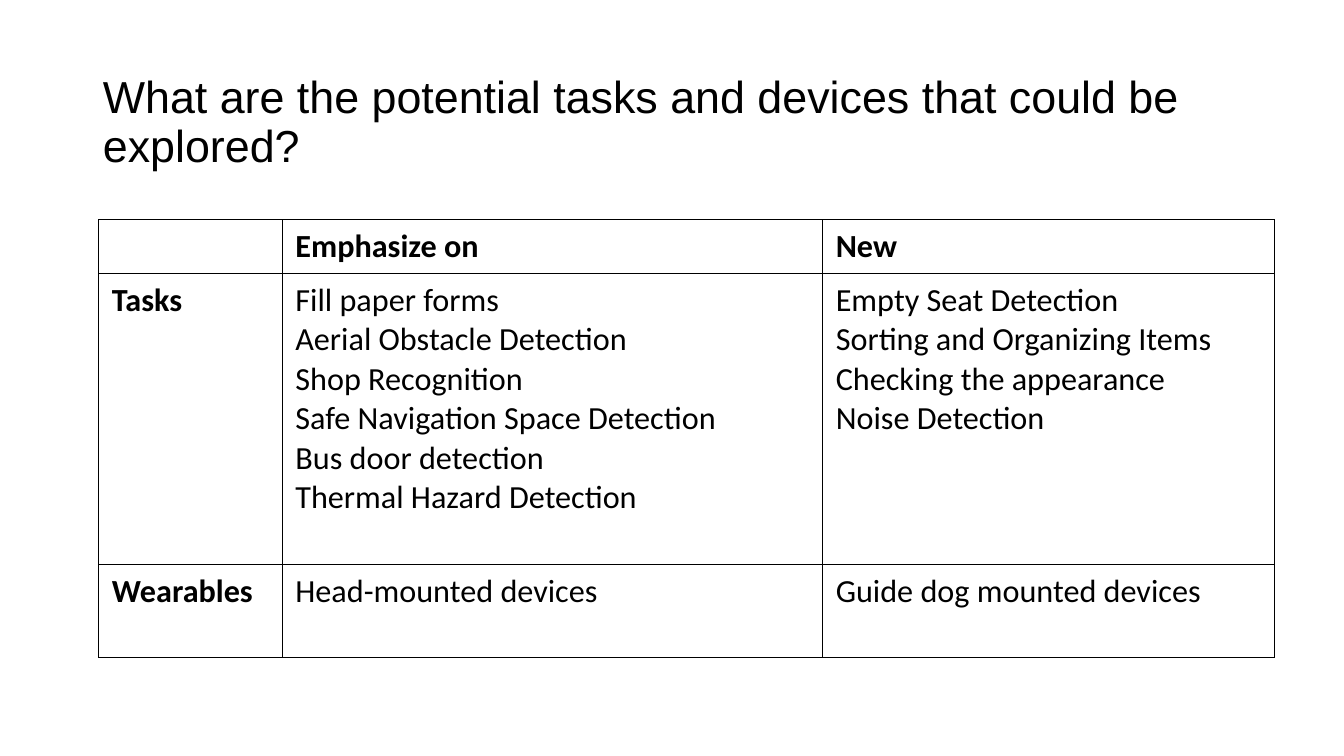
from dataclasses import dataclass
from pptx import Presentation
from pptx.dml.color import RGBColor
from pptx.enum.text import MSO_ANCHOR, MSO_AUTO_SIZE, PP_ALIGN
from pptx.oxml import parse_xml
from pptx.oxml.ns import nsdecls
from pptx.util import Emu, Pt


@dataclass(frozen=True)
class Theme:
    ink: str = "000000"
    paper: str = "FFFFFF"
    title_font: str = "Arial"
    table_font: str = "Calibri"
    title_size: int = 32
    table_size: int = 23
    border_width: int = 1


THEME = Theme()
EMU_PER_PX = 9144
TITLE_BOX = (92, 64, 1150, 117)
TABLE_ORIGIN = (98, 218)
COLUMNS = (182, 536, 448)
ROWS = (53, 289, 92)
CELL_INSETS = (13, 7)

TITLE = "What are the potential tasks and devices that could be explored?"
CELLS = (
    ((), ("Emphasize on",), ("New",)),
    (
        ("Tasks",),
        (
            "Fill paper forms",
            "Aerial Obstacle Detection",
            "Shop Recognition",
            "Safe Navigation Space Detection",
            "Bus door detection",
            "Thermal Hazard Detection",
        ),
        (
            "Empty Seat Detection",
            "Sorting and Organizing Items",
            "Checking the appearance",
            "Noise Detection",
        ),
    ),
    (("Wearables",), ("Head-mounted devices",), ("Guide dog mounted devices",)),
)


def px(n):
    return Emu(n * EMU_PER_PX)


def write(tf, lines, *, font, size, bold=False, spacing=1.0):
    for i, line in enumerate(lines):
        p = tf.paragraphs[0] if i == 0 else tf.add_paragraph()
        p.alignment = PP_ALIGN.LEFT
        p.line_spacing = spacing
        r = p.add_run()
        r.text = line
        r.font.name = font
        r.font.size = Pt(size)
        r.font.bold = bold
        r.font.color.rgb = RGBColor.from_string(THEME.ink)


def set_title(s):
    sp = s.shapes.title
    sp.left, sp.top, sp.width, sp.height = map(px, TITLE_BOX)
    tf = sp.text_frame
    tf.word_wrap = True
    tf.auto_size = MSO_AUTO_SIZE.NONE
    tf.vertical_anchor = MSO_ANCHOR.MIDDLE
    write(tf, [TITLE], font=THEME.title_font, size=THEME.title_size, spacing=0.9)


def set_borders(cell):
    tcPr = cell._tc.get_or_add_tcPr()
    for i, side in enumerate("LRTB"):
        tcPr.insert(i, parse_xml(
            f'<a:ln{side} {nsdecls("a")} w="{Pt(THEME.border_width)}">'
            f'<a:solidFill><a:srgbClr val="{THEME.ink}"/></a:solidFill>'
            f'</a:ln{side}>'
        ))


def format_cell(cell, lines, bold):
    cell.fill.background()
    set_borders(cell)
    cell.margin_left = cell.margin_right = px(CELL_INSETS[0])
    cell.margin_top = cell.margin_bottom = px(CELL_INSETS[1])
    cell.vertical_anchor = MSO_ANCHOR.TOP
    write(cell.text_frame, lines, font=THEME.table_font, size=THEME.table_size, bold=bold)


def add_task_table(s):
    frame = s.shapes.add_table(
        len(ROWS), len(COLUMNS), *map(px, (*TABLE_ORIGIN, sum(COLUMNS), sum(ROWS)))
    )
    table = frame.table
    table.first_row = table.horz_banding = False
    for column, width in zip(table.columns, COLUMNS):
        column.width = px(width)
    for row, height in zip(table.rows, ROWS):
        row.height = px(height)
    for i, row in enumerate(CELLS):
        for j, lines in enumerate(row):
            format_cell(table.cell(i, j), lines, bold=i == 0 or j == 0)


def main():
    prs = Presentation()
    prs.slide_width, prs.slide_height = px(1333), px(750)
    s = prs.slides.add_slide(prs.slide_layouts.get_by_name("Title Only"))
    fill = s.background.fill
    fill.solid()
    fill.fore_color.rgb = RGBColor.from_string(THEME.paper)
    set_title(s)
    add_task_table(s)
    prs.save("out.pptx")


if __name__ == "__main__":
    main()
